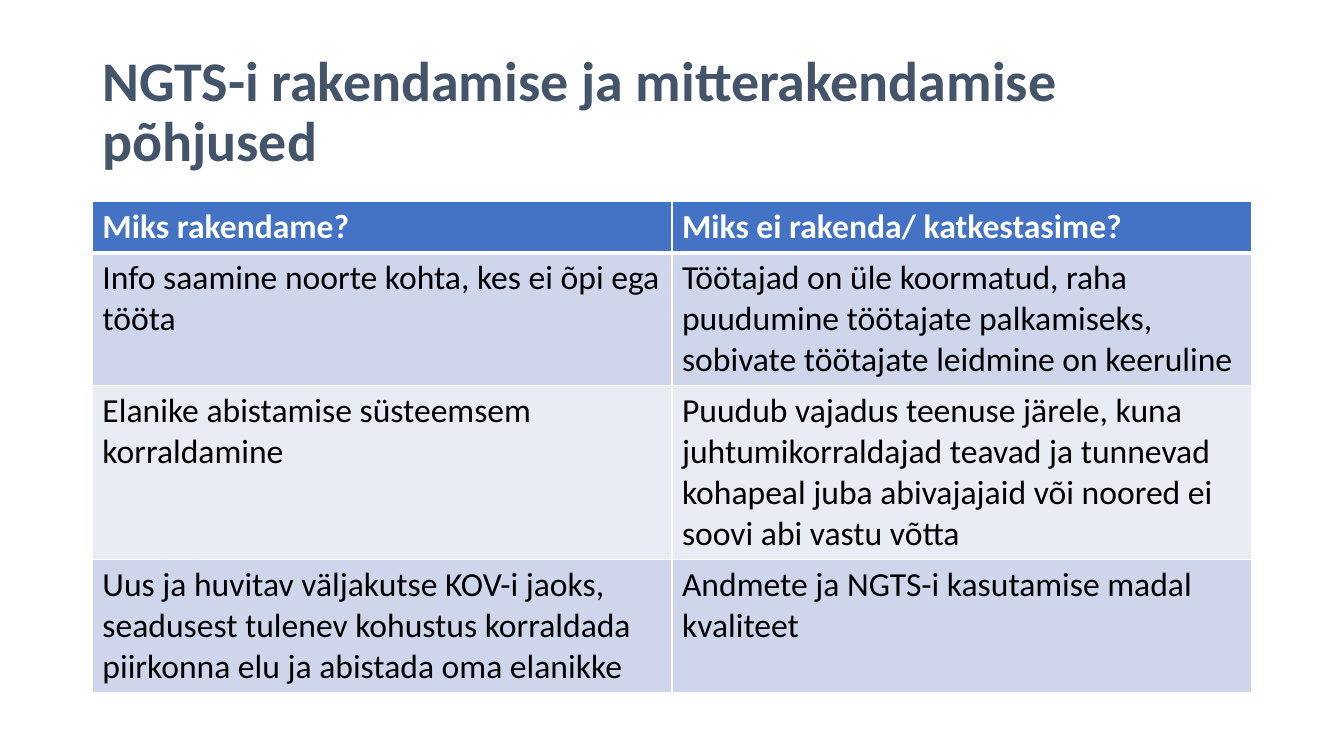
"""Build a slide with a two-column table of reasons for and against using NGTS."""
import lxml.etree
import pptx
import pptx.dml.color
import pptx.enum.text
import pptx.oxml.ns
import pptx.util

Pt = pptx.util.Pt
RGBColor = pptx.dml.color.RGBColor
qn = pptx.oxml.ns.qn

WHITE = RGBColor(0xFF, 0xFF, 0xFF)
BLACK = RGBColor(0x00, 0x00, 0x00)
SLATE = RGBColor(0x44, 0x54, 0x6A)
HEADER_BLUE = RGBColor(0x44, 0x72, 0xC4)
BAND_DARK = RGBColor(0xCF, 0xD5, 0xEA)
BAND_LIGHT = RGBColor(0xE9, 0xEB, 0xF5)

LEFT, WIDTH = 66, 828
ROW_HEIGHTS = [36.5, 95, 124, 95]
ROW_FILLS = [HEADER_BLUE, BAND_DARK, BAND_LIGHT, BAND_DARK]
REASONS = [
    ("Miks rakendame?", "Miks ei rakenda/ katkestasime?"),
    ("Info saamine noorte kohta, kes ei õpi ega tööta",
     "Töötajad on üle koormatud, raha puudumine töötajate palkamiseks, "
     "sobivate töötajate leidmine on keeruline"),
    ("Elanike abistamise süsteemsem korraldamine",
     "Puudub vajadus teenuse järele, kuna juhtumikorraldajad teavad ja tunnevad "
     "kohapeal juba abivajajaid või noored ei soovi abi vastu võtta"),
    ("Uus ja huvitav väljakutse KOV-i jaoks, seadusest tulenev kohustus korraldada "
     "piirkonna elu ja abistada oma elanikke",
     "Andmete ja NGTS-i kasutamise madal kvaliteet"),
]


def add_run(paragraph, text, size, color, bold):
    run = paragraph.add_run()
    run.text = text
    run.font.name = "Calibri"
    run.font.size = Pt(size)
    run.font.bold = bold
    run.font.color.rgb = color


def set_borders(cell, widths):
    properties = cell._tc.get_or_add_tcPr()
    for position, (side, width) in enumerate(widths.items()):
        line = lxml.etree.Element(qn("a:ln" + side), w=str(Pt(width)))
        fill = lxml.etree.SubElement(line, qn("a:solidFill"))
        lxml.etree.SubElement(fill, qn("a:srgbClr"), val=str(WHITE))
        properties.insert(position, line)


presentation = pptx.Presentation()
presentation.slide_width = Pt(960)
presentation.slide_height = Pt(540)
slide = presentation.slides.add_slide(presentation.slide_layouts[6])

title = slide.shapes.add_textbox(Pt(LEFT), Pt(28.75), Pt(WIDTH), Pt(104.4))
title.text_frame.word_wrap = True
title.text_frame.vertical_anchor = pptx.enum.text.MSO_ANCHOR.MIDDLE
title_paragraph = title.text_frame.paragraphs[0]
title_paragraph.line_spacing = 0.9
add_run(title_paragraph, "NGTS-i rakendamise ja mitterakendamise põhjused", 40, SLATE, True)

table = slide.shapes.add_table(
    len(REASONS), 2, Pt(LEFT), Pt(144), Pt(WIDTH), Pt(sum(ROW_HEIGHTS))).table
for row_index, (texts, height, fill) in enumerate(zip(REASONS, ROW_HEIGHTS, ROW_FILLS)):
    is_header = row_index == 0
    table.rows[row_index].height = Pt(height)
    for column_index, text in enumerate(texts):
        cell = table.cell(row_index, column_index)
        cell.fill.solid()
        cell.fill.fore_color.rgb = fill
        set_borders(cell, {"L": 1, "R": 1, "T": 3 if row_index == 1 else 1,
                           "B": 3 if is_header else 1})
        add_run(cell.text_frame.paragraphs[0], text, 24,
                WHITE if is_header else BLACK, is_header)

presentation.save("out.pptx")
